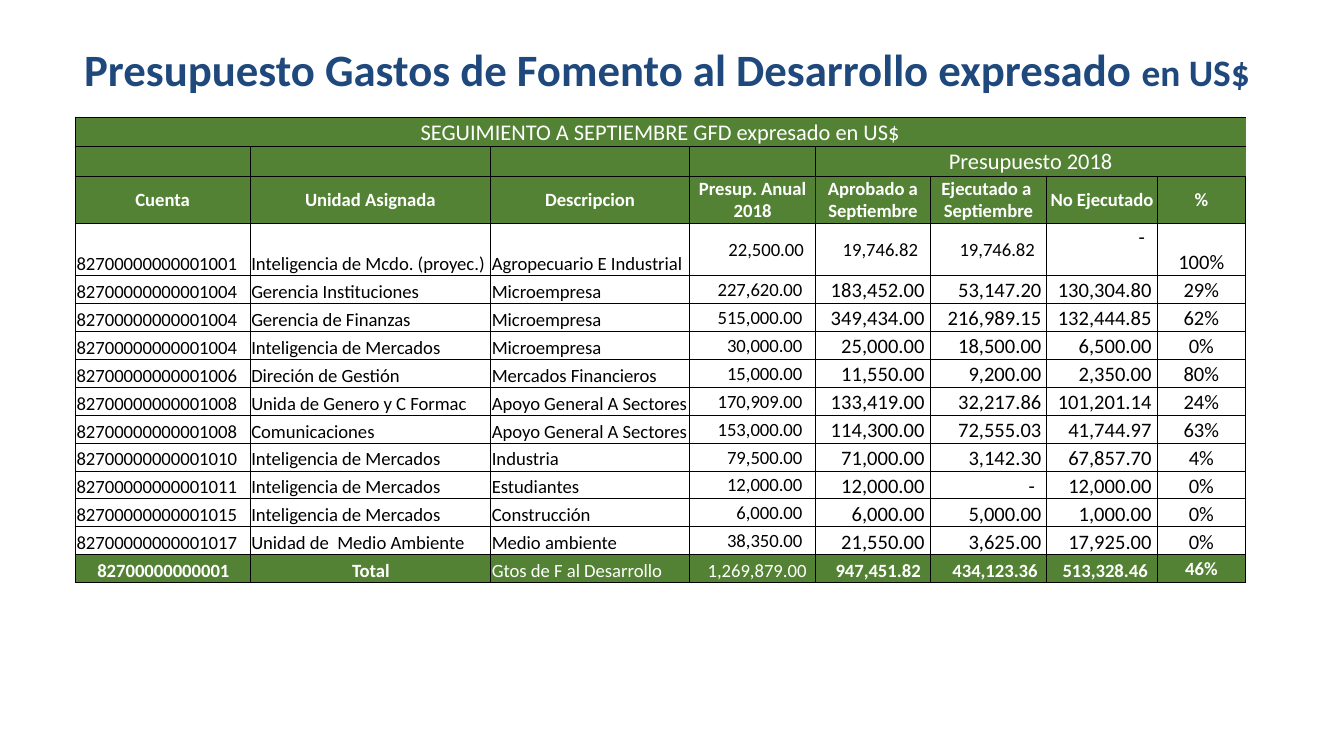
from lxml.etree import SubElement
from pptx import Presentation
from pptx.dml.color import RGBColor
from pptx.enum.text import MSO_ANCHOR as Anchor, MSO_AUTO_SIZE as AutoSize, PP_ALIGN as Align
from pptx.oxml.ns import qn
from pptx.util import Inches, Pt

FONT = "Calibri"
BLUE = RGBColor(0x1F, 0x49, 0x7D)
NAVY = RGBColor(0x00, 0x20, 0x60)
GREEN = RGBColor(0x54, 0x82, 0x35)
WHITE = RGBColor(0xFF, 0xFF, 0xFF)
BLACK = RGBColor(0x00, 0x00, 0x00)

COL_WIDTHS = [1.3, 1.79, 1.48, 0.94, 0.85, 0.87, 0.82, 0.66]
HEADINGS = ["Cuenta", "Unidad Asignada", "Descripcion", "Presup. Anual 2018",
            "Aprobado a Septiembre", "Ejecutado a  Septiembre", "No Ejecutado", "%"]
ACCOUNTS = [
    ["82700000000001001", "Inteligencia de Mcdo. (proyec.)", "Agropecuario E Industrial",
     "22,500.00", "19,746.82", "19,746.82", "-", "100%"],
    ["82700000000001004", "Gerencia Instituciones", "Microempresa",
     "227,620.00", "183,452.00", "53,147.20", "130,304.80", "29%"],
    ["82700000000001004", "Gerencia de Finanzas", "Microempresa",
     "515,000.00", "349,434.00", "216,989.15", "132,444.85", "62%"],
    ["82700000000001004", "Inteligencia de Mercados", "Microempresa",
     "30,000.00", "25,000.00", "18,500.00", "6,500.00", "0%"],
    ["82700000000001006", "Direción de Gestión", "Mercados Financieros",
     "15,000.00", "11,550.00", "9,200.00", "2,350.00", "80%"],
    ["82700000000001008", "Unida de Genero y C Formac", "Apoyo General A Sectores",
     "170,909.00", "133,419.00", "32,217.86", "101,201.14", "24%"],
    ["82700000000001008", "Comunicaciones", "Apoyo General A Sectores",
     "153,000.00", "114,300.00", "72,555.03", "41,744.97", "63%"],
    ["82700000000001010", "Inteligencia de Mercados", "Industria",
     "79,500.00", "71,000.00", "3,142.30", "67,857.70", "4%"],
    ["82700000000001011", "Inteligencia de Mercados", "Estudiantes",
     "12,000.00", "12,000.00", "-", "12,000.00", "0%"],
    ["82700000000001015", "Inteligencia de Mercados", "Construcción",
     "6,000.00", "6,000.00", "5,000.00", "1,000.00", "0%"],
    ["82700000000001017", "Unidad de  Medio Ambiente", "Medio ambiente",
     "38,350.00", "21,550.00", "3,625.00", "17,925.00", "0%"],
]
TOTAL = ["82700000000001", "Total", "Gtos de F al Desarrollo",
         "1,269,879.00", "947,451.82", "434,123.36", "513,328.46", "46%"]
BANNERS = [
    ["SEGUIMIENTO A SEPTIEMBRE GFD expresado en US$"] + [""] * 7,
    [""] * 4 + ["Presupuesto 2018"] + [""] * 3,
]
ROWS = BANNERS + [HEADINGS] + ACCOUNTS + [TOTAL]
ROW_HEIGHTS = [0.22, 0.22, 0.35, 0.39] + [2.29 / 11] * 11
HEADING_ROW, FIRST_ROW, TOTAL_ROW = 2, 3, len(ROWS) - 1
ANNUAL_COL, PENDING_COL, PERCENT_COL = 3, 6, 7
NAVY_SIDES = {(2, 3): "R", (2, 4): "L"}


def add_title(slide):
    title = slide.shapes.title
    title.left, title.top = Inches(0.5), Inches(0.23)
    title.width, title.height = Inches(8.9), Inches(0.56)
    tf = title.text_frame
    tf.auto_size = AutoSize.NONE
    tf.vertical_anchor = Anchor.MIDDLE
    tf.margin_left = Inches(0.05)
    p = tf.paragraphs[0]
    p.alignment = Align.RIGHT
    for text, size in (("Presupuesto Gastos de Fomento al Desarrollo expresado ", 24),
                       ("en US$", 20)):
        r = p.add_run()
        r.text = text
        r.font.name, r.font.size, r.font.bold = FONT, Pt(size), True
        r.font.color.rgb = BLUE


def set_borders(cell, row, col):
    """Draw thin borders; the merged banners stay open on the right."""
    tc_pr = cell._tc.get_or_add_tcPr()
    merged = cell.is_merge_origin or cell.is_spanned
    for side in "LRTB":
        if side == "R" and merged:
            SubElement(SubElement(tc_pr, qn("a:lnR"), w="0"), qn("a:noFill"))
            continue
        color = NAVY if side in NAVY_SIDES.get((row, col), "") else BLACK
        ln = SubElement(tc_pr, qn(f"a:ln{side}"), w=str(Pt(0.5)))
        SubElement(SubElement(ln, qn("a:solidFill")), qn("a:srgbClr"), val=str(color))


def cell_layout(row, col):
    """Return alignment, anchor and right margin for a cell."""
    if row < HEADING_ROW:
        return Align.CENTER, Anchor.BOTTOM, 0.01
    if row == HEADING_ROW:
        return Align.CENTER, Anchor.MIDDLE, 0.01
    if col == PERCENT_COL:
        return Align.CENTER, Anchor.MIDDLE if row == TOTAL_ROW else Anchor.BOTTOM, 0.01
    if col < ANNUAL_COL:
        centred = row == TOTAL_ROW and col < 2
        return Align.CENTER if centred else Align.LEFT, Anchor.BOTTOM, 0
    if row == TOTAL_ROW:
        return Align.RIGHT, Anchor.BOTTOM, 0.07
    if row == FIRST_ROW:
        return Align.RIGHT, Anchor.TOP if col == PENDING_COL else Anchor.MIDDLE, 0.09
    if col == ANNUAL_COL:
        return Align.RIGHT, Anchor.MIDDLE, 0.1
    return Align.RIGHT, Anchor.BOTTOM, 0.09 if ROWS[row][col] == "-" else 0.04


def font_size(row, col):
    if row < HEADING_ROW:
        return 12
    large_from = PENDING_COL if row == FIRST_ROW else ANNUAL_COL + 1
    return 11 if FIRST_ROW <= row < TOTAL_ROW and col >= large_from else 10


def fill_cell(cell, row, col, text):
    green = row <= HEADING_ROW or row == TOTAL_ROW
    set_borders(cell, row, col)
    if green:
        cell.fill.solid()
        cell.fill.fore_color.rgb = GREEN
    else:
        cell.fill.background()
    align, cell.vertical_anchor, right = cell_layout(row, col)
    cell.margin_left = cell.margin_top = Inches(0.01)
    cell.margin_right, cell.margin_bottom = Inches(right), 0
    size = font_size(row, col)
    p = cell.text_frame.paragraphs[0]
    p.alignment = align
    if not text:
        SubElement(p._p, qn("a:endParaRPr"), sz=str(size * 100))
        return
    r = p.add_run()
    r.text = text
    r.font.name, r.font.size = FONT, Pt(size)
    r.font.bold = row == HEADING_ROW or (row == TOTAL_ROW and col not in (2, ANNUAL_COL))
    r.font.color.rgb = WHITE if green else BLACK


def add_budget_table(slide):
    frame = slide.shapes.add_table(len(ROWS), len(COL_WIDTHS), Inches(0.56), Inches(0.87),
                                   Inches(sum(COL_WIDTHS)), Inches(sum(ROW_HEIGHTS)))
    table = frame.table
    table.first_row = table.horz_banding = False
    for column, width in zip(table.columns, COL_WIDTHS):
        column.width = Inches(width)
    for table_row, height in zip(table.rows, ROW_HEIGHTS):
        table_row.height = Inches(height)
    table.cell(0, 0).merge(table.cell(0, PERCENT_COL))
    table.cell(1, 4).merge(table.cell(1, PERCENT_COL))
    for row, texts in enumerate(ROWS):
        for col, text in enumerate(texts):
            fill_cell(table.cell(row, col), row, col, text)


def main():
    prs = Presentation()
    prs.slide_width, prs.slide_height = Inches(10), Inches(10 * 9 / 16)
    slide = prs.slides.add_slide(prs.slide_layouts[5])
    add_title(slide)
    add_budget_table(slide)
    prs.save("out.pptx")


if __name__ == "__main__":
    main()
